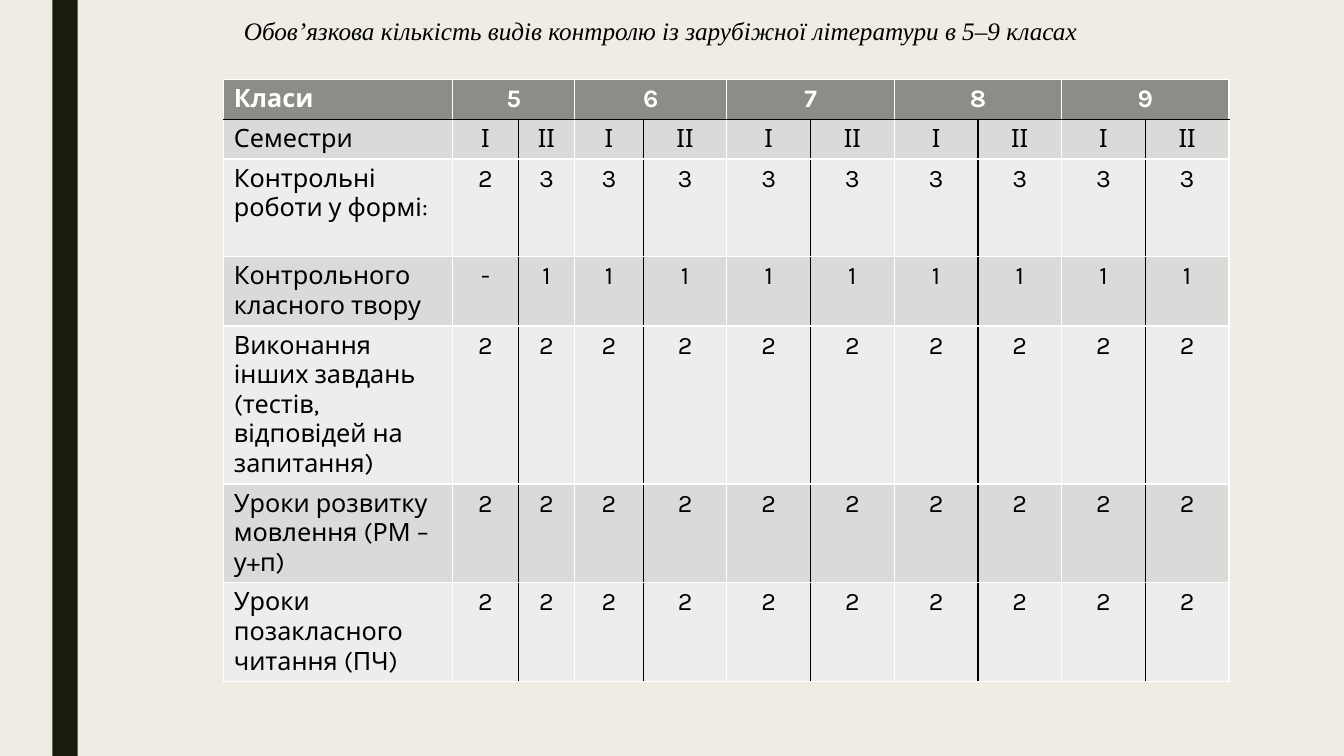
from lxml.etree import SubElement as Sub
from pptx import Presentation as Deck
from pptx.dml.color import RGBColor as Rgb
from pptx.enum.shapes import MSO_SHAPE as Kind
from pptx.enum.text import PP_ALIGN as Align
from pptx.oxml.ns import qn
from pptx.util import Inches, Pt

UNIT = Inches(0.01)
WIDE, HIGH = 1333, 750
INK = {"page": "EFEDE3", "bar": "191B0E", "head": "8C8D86", "dark": "DADAD9",
       "pale": "EDEDED", "white": "FFFFFF", "black": "000000"}
TITLE = "Обов’язкова кількість видів контролю із зарубіжної літератури в 5–9 класах"
GRADES = ["5", "6", "7", "8", "9"]
ROWS = [
    ("Семестри", ["І", "ІІ"] * 5),
    ("Контрольні роботи у формі:", ["2"] + ["3"] * 9),
    ("Контрольного класного твору", ["-"] + ["1"] * 9),
    ("Виконання інших завдань (тестів, відповідей на запитання)", ["2"] * 10),
    ("Уроки розвитку мовлення (РМ – у+п)", ["2"] * 10),
    ("Уроки позакласного читання (ПЧ)", ["2"] * 10),
]
COLS = [227, 65, 56, 68] + [83] * 7
TALL = [39, 39, 97, 68, 155, 97, 97]


def grid(*spans):
    """Turn grid steps into slide lengths."""
    return [UNIT * span for span in spans]


def tint(name):
    """Look up a named colour."""
    return Rgb.from_string(INK[name])


def paint(fill, name):
    """Fill with one plain colour."""
    fill.solid()
    fill.fore_color.rgb = tint(name)


def write(frame, text, ink, form, align=Align.LEFT):
    """Put one formatted run in a text frame."""
    para = frame.paragraphs[0]
    para.alignment = align
    run = para.add_run()
    run.text = text
    for key, val in form.items():
        setattr(run.font, key, val)
    run.font.color.rgb = tint(ink)
    return para


def edge(cell, row, col):
    """Draw the four borders of a cell."""
    dark = {
        "L": row > 0 and col > 0 and col % 2 == 0,
        "R": row > 0 and col % 2 == 1,
        "T": row == 1,
        "B": row == 0,
    }
    props = cell._tc.get_or_add_tcPr()
    for side, black in dark.items():
        line = Sub(props, qn(f"a:ln{side}"), w=str(Pt(0.96)))
        solid = Sub(line, qn("a:solidFill"))
        Sub(solid, qn("a:srgbClr"), val=INK["black" if black else "white"])


def add_bar(slide):
    """Add the upright band on the left."""
    bar = slide.shapes.add_shape(Kind.RECTANGLE, *grid(52, 0, 25, HIGH))
    bar.shadow.inherit = False
    paint(bar.fill, "bar")
    bar.line.fill.background()


def add_title(slide):
    """Add the heading above the table."""
    frame = slide.shapes.add_textbox(*grid(232, 8, 968, 42)).text_frame
    frame.word_wrap = True
    form = {"name": "Times New Roman", "size": Pt(18), "italic": True}
    para = write(frame, TITLE, "black", form)
    for key, val in {"line_spacing": 1.07, "space_after": Pt(8)}.items():
        setattr(para, key, val)


def add_plan(slide):
    """Add the table of controls by grade and term."""
    area = grid(222, 79, sum(COLS), sum(TALL))
    table = slide.shapes.add_table(len(TALL), len(COLS), *area).table
    table.horz_banding = False
    for col, width in zip(table.columns, grid(*COLS)):
        col.width = width
    for row, height in zip(table.rows, grid(*TALL)):
        row.height = height
    head = [text for grade in GRADES for text in (grade, "")]
    for row, (label, vals) in enumerate([("Класи", head)] + ROWS):
        top = row == 0
        shade = "head" if top else "dark" if row % 2 else "pale"
        form = {"name": "Karla", "size": Pt(18), "bold": top}
        for col, text in enumerate([label] + vals):
            cell = table.cell(row, col)
            edge(cell, row, col)
            paint(cell.fill, shade)
            if text:
                align = Align.CENTER if col else Align.LEFT
                write(cell.text_frame, text, "white" if top else "black", form, align)
    for col in range(1, len(COLS), 2):
        table.cell(0, col).merge(table.cell(0, col + 1))


def main():
    """Build and save the slide."""
    deck = Deck()
    deck.slide_width, deck.slide_height = grid(WIDE, HIGH)
    slide = deck.slides.add_slide(deck.slide_layouts[6])
    paint(slide.background.fill, "page")
    add_bar(slide)
    add_plan(slide)
    add_title(slide)
    deck.save("out.pptx")


if __name__ == "__main__":
    main()
